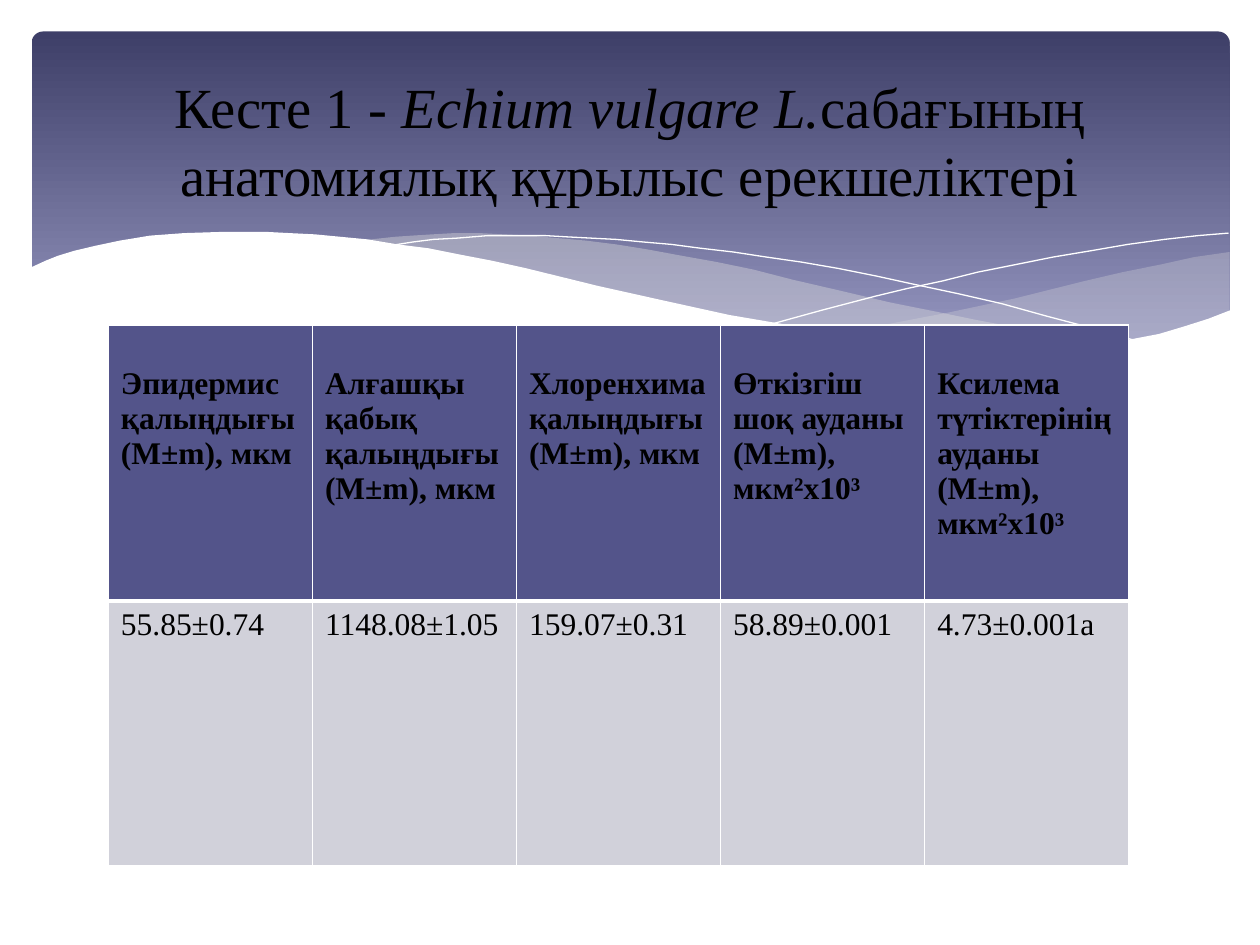
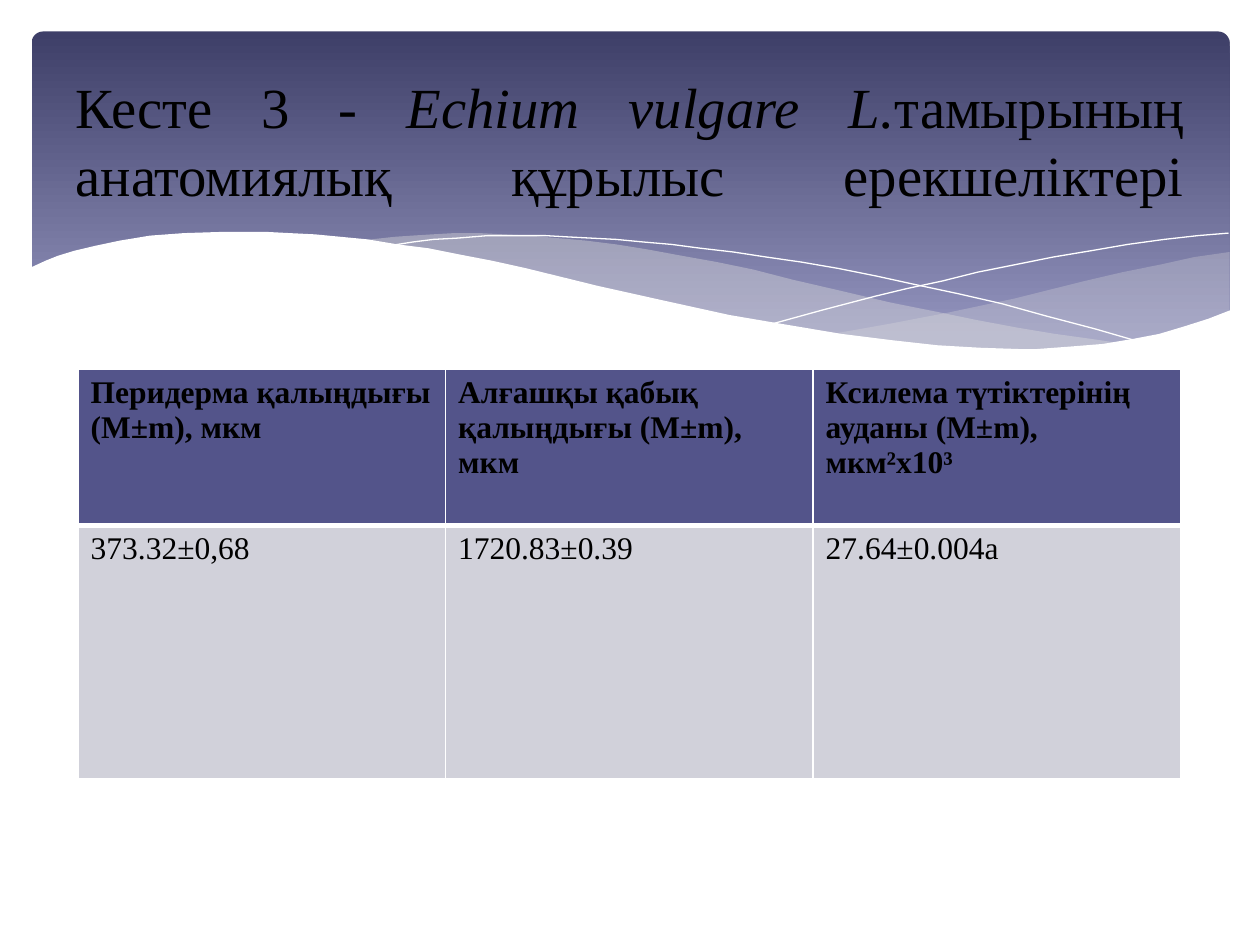
"""Two table slides on the anatomy of Echium vulgare under a shared wave band."""
import pptx
import pptx.util
import pptx.dml.color
import pptx.enum.shapes
import pptx.enum.text
import pptx.oxml
import pptx.oxml.ns
from pptx.util import Inches, Pt

COLORS = {
    "ink": "000000", "white": "FFFFFF", "band_top": "3E3F68", "band_bottom": "9394BE",
    "wave": "DEDEDE", "header": "53548A", "body": "D1D1DA",
}
FONT = "Times New Roman"
ALIGN = pptx.enum.text.PP_ALIGN

SLIDES = [
    {
        "title": [("Кесте 1 - ", False), ("Echium vulgare L.", True),
                  ("сабағының анатомиялық құрылыс ерекшеліктері", False)],
        "align": ALIGN.CENTER,
        "columns": [
            ("Эпидермис қалыңдығы (М±m), мкм", "55.85±0.74"),
            ("Алғашқы қабық қалыңдығы (M±m), мкм", "1148.08±1.05"),
            ("Хлоренхима қалыңдығы (M±m), мкм", "159.07±0.31"),
            ("Өткізгіш шоқ ауданы (М±m), мкм²х10³", "58.89±0.001"),
            ("Ксилема түтіктерінің ауданы (M±m), мкм²х10³", "4.73±0.001а"),
        ],
        "at": (0.86, 2.58), "width": 8.1, "rows": (2.19, 2.1), "header_top": 0.33,
    },
    {
        "title": [("Кесте 3 - ", False), ("Echium vulgare L.", True),
                  ("тамырының анатомиялық құрылыс ерекшеліктері", False)],
        "align": ALIGN.JUSTIFY,
        "columns": [
            ("Перидерма қалыңдығы (M±m), мкм", "373.32±0,68"),
            ("Алғашқы қабық қалыңдығы (M±m), мкм", "1720.83±0.39"),
            ("Ксилема түтіктерінің ауданы (М±m), мкм²х10³", "27.64±0.004а"),
        ],
        "at": (0.62, 2.93), "width": 8.75, "rows": (1.24, 2.01), "header_top": 0.05,
    },
]

RIGHT_WAVE = [
    (9.76, 2), (9.48, 2.04), (9.21, 2.1), (8.91, 2.16), (8.61, 2.23), (8.05, 2.37),
    (7.53, 2.48), (7.06, 2.57), (6.61, 2.65), (6.91, 2.69), (7.19, 2.72), (7.45, 2.75),
    (7.69, 2.77), (8.03, 2.78), (8.35, 2.77), (8.63, 2.75), (8.89, 2.72), (9.13, 2.67),
    (9.35, 2.62), (9.49, 2.57), (9.63, 2.52), (9.76, 2.47),
]
MIDDLE_WAVE = [
    (8.93, 2.73), (8.66, 2.69), (8.37, 2.65), (8.07, 2.6), (7.75, 2.54), (7.41, 2.47),
    (7.06, 2.4), (6.68, 2.31), (6.29, 2.22), (5.98, 2.14), (5.69, 2.08), (5.41, 2.03),
    (5.14, 1.98), (4.89, 1.94), (4.65, 1.91), (4.42, 1.89), (4.2, 1.87), (3.99, 1.86),
    (3.8, 1.85), (3.61, 1.85), (3.44, 1.86), (3.28, 1.87), (3.13, 1.88), (2.86, 1.91),
    (3.23, 1.96), (3.62, 2.03), (4.04, 2.11), (4.49, 2.22), (4.91, 2.32), (5.3, 2.4),
    (5.66, 2.48), (6.01, 2.55), (6.34, 2.61), (6.65, 2.66), (6.95, 2.7), (7.22, 2.74),
    (7.48, 2.76), (7.73, 2.77), (7.96, 2.78), (8.28, 2.78), (8.57, 2.77), (8.76, 2.75),
]
FALLING_LINE = [
    (3.09, 1.95), (3.28, 1.92), (3.44, 1.9), (3.63, 1.89), (3.87, 1.87), (4.16, 1.87),
    (4.33, 1.87), (4.5, 1.88), (4.69, 1.89), (4.89, 1.9), (5.1, 1.92), (5.33, 1.94),
    (5.56, 1.97), (5.82, 2), (6.08, 2.04), (6.36, 2.08), (6.65, 2.13), (6.95, 2.19),
    (7.27, 2.26), (7.6, 2.33), (7.95, 2.41), (8.31, 2.51), (8.69, 2.61), (9.07, 2.72),
]
RISING_LINE = [
    (6.13, 2.57), (6.53, 2.46), (6.95, 2.35), (7.2, 2.29), (7.48, 2.23), (7.76, 2.16),
    (8.06, 2.1), (8.36, 2.04), (8.66, 1.99), (8.95, 1.94), (9.24, 1.9), (9.51, 1.87),
    (9.75, 1.85),
]
WHITE_WAVE = [
    (9.77, 2.46), (9.59, 2.53), (9.4, 2.59), (9.2, 2.65), (8.99, 2.69), (8.75, 2.73),
    (8.5, 2.75), (8.23, 2.77), (8.09, 2.77), (7.78, 2.76), (7.44, 2.74), (7.08, 2.7),
    (6.68, 2.65), (6.26, 2.58), (5.79, 2.5), (5.29, 2.39), (4.75, 2.27), (4.18, 2.13),
    (3.91, 2.07), (3.65, 2.02), (3.4, 1.97), (3.16, 1.94), (2.92, 1.9), (2.71, 1.88),
    (2.5, 1.86), (2.3, 1.85), (2.11, 1.84), (1.77, 1.84), (1.46, 1.85), (1.19, 1.87),
    (0.95, 1.91), (0.76, 1.95), (0.59, 1.99), (0.46, 2.03), (0.36, 2.07), (0.23, 2.13),
    (0.23, 3.29), (9.77, 3.29),
]
WAVES = [
    {"points": RIGHT_WAVE, "fill": "wave", "opacity": 29},
    {"points": MIDDLE_WAVE, "fill": "wave", "opacity": 40},
    {"points": FALLING_LINE, "line": "white"},
    {"points": RISING_LINE, "line": "white"},
    {"points": WHITE_WAVE, "fill": "white"},
]


def rgb(name):
    return pptx.dml.color.RGBColor.from_string(COLORS[name])


def write(paragraph, text, size=18, bold=False, italic=False, color="ink"):
    run = paragraph.add_run()
    run.text = text
    run.font.name, run.font.size = FONT, Pt(size)
    run.font.bold, run.font.italic = bold, italic
    run.font.color.rgb = rgb(color)


def draw_band(shapes):
    band = shapes.add_shape(pptx.enum.shapes.MSO_SHAPE.ROUNDED_RECTANGLE,
                            Inches(0.25), Inches(0.25), Inches(9.51), Inches(2.7))
    band.adjustments[0] = 0.034
    band.shadow.inherit = False
    band.line.fill.background()
    band.fill.gradient()
    band.fill.gradient_angle = 270
    stops = [("band_top", 0), ("band_bottom", 0.9)]
    for stop, (color, position) in zip(band.fill.gradient_stops, stops):
        stop.color.rgb, stop.position = rgb(color), position
    return band


def draw_wave(shapes, points, fill=None, opacity=100, line=None):
    start, *rest = [(Inches(x), Inches(y)) for x, y in points]
    outline = shapes.build_freeform(*start)
    outline.add_line_segments(rest, close=fill is not None)
    wave = outline.convert_to_shape()
    wave.shadow.inherit = False
    if fill:
        wave.fill.solid()
        wave.fill.fore_color.rgb = rgb(fill)
        wave.line.fill.background()
        if opacity < 100:
            tint = wave.element.spPr.find(".//" + pptx.oxml.ns.qn("a:srgbClr"))
            alpha = pptx.oxml.parse_xml(
                f'<a:alpha {pptx.oxml.ns.nsdecls("a")} val="{opacity * 1000}"/>')
            tint.append(alpha)
    else:
        wave.fill.background()
        wave.line.color.rgb = rgb(line)
        wave.line.width = Pt(0)
    return wave


def decorate_layout(layout, slide):
    parts = [draw_band(slide.shapes)]
    parts += [draw_wave(slide.shapes, **wave) for wave in WAVES]
    for number, part in enumerate(parts, 101):
        part.element.nvSpPr.cNvPr.id = number
        layout.shapes.element.append(part.element)


def set_title(title, pieces, align):
    title.left, title.top = Inches(0.5), Inches(0.57)
    title.width, title.height = Inches(9), Inches(1.1)
    frame = title.text_frame
    frame.auto_size = pptx.enum.text.MSO_AUTO_SIZE.NONE
    frame.word_wrap = True
    frame.vertical_anchor = pptx.enum.text.MSO_ANCHOR.TOP
    frame.margin_top = frame.margin_bottom = 0
    heading = frame.paragraphs[0]
    heading.alignment = align
    heading.line_spacing = Pt(39)
    for text, italic in pieces:
        write(heading, text, size=32.4, italic=italic)
    if align == ALIGN.JUSTIFY:
        heading.add_line_break()


def set_borders(cell, **widths):
    properties = cell._tc.get_or_add_tcPr()
    for side in "LRTB":
        properties.append(pptx.oxml.parse_xml(
            f'<a:ln{side} {pptx.oxml.ns.nsdecls("a")} w="{Pt(widths.get(side, 1))}">'
            f'<a:solidFill><a:srgbClr val="{COLORS["white"]}"/></a:solidFill></a:ln{side}>'))


def add_measurements(slide, columns, at, width, rows, header_top):
    left, top = at
    table = slide.shapes.add_table(len(rows), len(columns), Inches(left), Inches(top),
                                   Inches(width), Inches(sum(rows))).table
    for row, height in zip(table.rows, rows):
        row.height = Inches(height)
    for c, entries in enumerate(columns):
        table.columns[c].width = Inches(width / len(columns))
        for r, text in enumerate(entries):
            is_header = r == 0
            cell = table.cell(r, c)
            set_borders(cell, **({"B": 3} if is_header else {"T": 3}))
            cell.fill.solid()
            cell.fill.fore_color.rgb = rgb("header" if is_header else "body")
            cell.margin_top = Inches(header_top if is_header else 0.05)
            write(cell.text_frame.paragraphs[0], text, bold=is_header)


def main():
    deck = pptx.Presentation()
    deck.slide_width, deck.slide_height = Inches(10), Inches(7.5)
    layout = deck.slide_layouts[5]
    for number, content in enumerate(SLIDES):
        slide = deck.slides.add_slide(layout)
        if number == 0:
            decorate_layout(layout, slide)
        set_title(slide.shapes.title, content["title"], content["align"])
        add_measurements(slide, content["columns"], content["at"], content["width"],
                         content["rows"], content["header_top"])
    deck.save("out.pptx")


if __name__ == "__main__":
    main()
